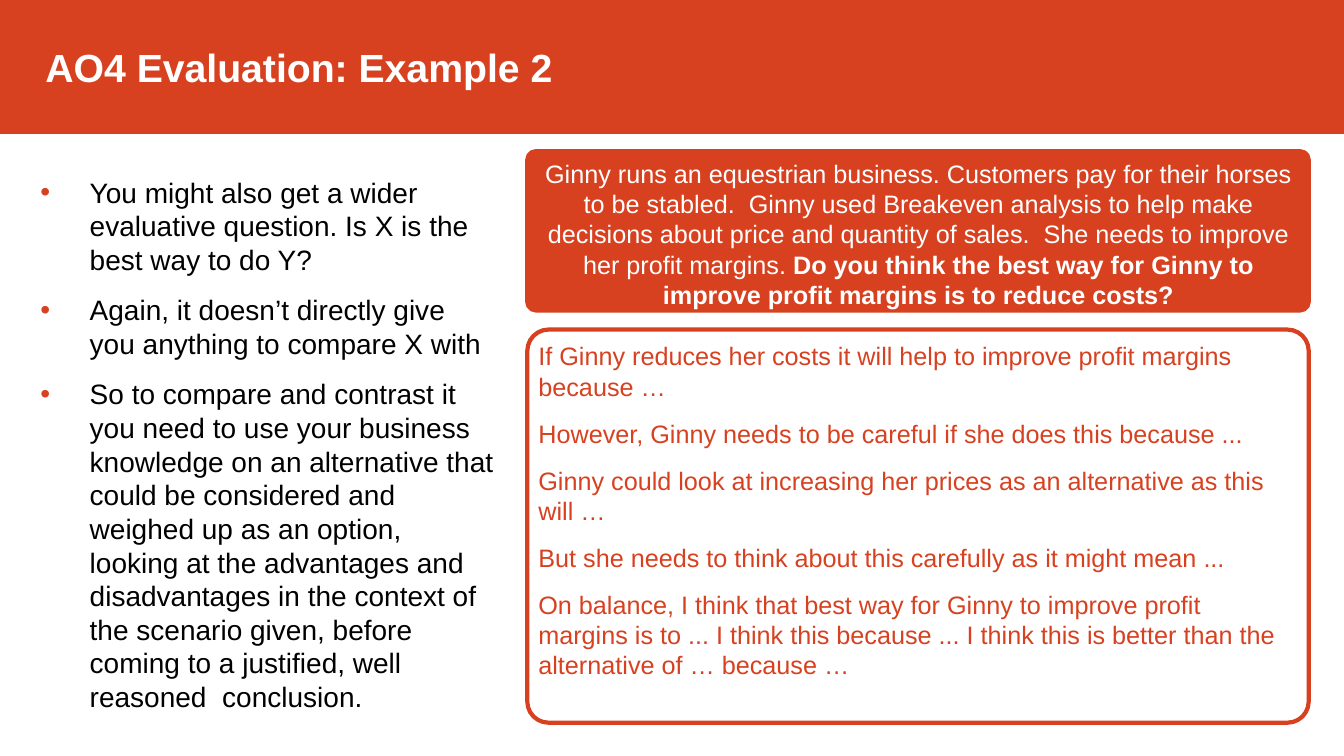
from lxml import etree
from pptx import Presentation
from pptx.dml.color import RGBColor
from pptx.enum.shapes import MSO_SHAPE
from pptx.enum.text import MSO_ANCHOR, MSO_AUTO_SIZE, PP_ALIGN
from pptx.oxml.ns import qn
from pptx.util import Emu, Pt

RECT, ROUND = MSO_SHAPE.RECTANGLE, MSO_SHAPE.ROUNDED_RECTANGLE
LEFT, CENTER = PP_ALIGN.LEFT, PP_ALIGN.CENTER
TOP, MIDDLE = MSO_ANCHOR.TOP, MSO_ANCHOR.MIDDLE
NO_FIT = MSO_AUTO_SIZE.NONE

EMU_PER_PX = 9144  # 100 px to the inch
TITLE_ONLY = 5
RED, WHITE, BLACK = "D74120", "FFFFFF", "000000"


def px(n):
    return Emu(n * EMU_PER_PX)


def rgb(value):
    return RGBColor.from_string(value)


class SlideBuilder:
    font = "Arial"
    inset = 5

    def __init__(self, slide):
        self.slide = slide

    def panel(self, kind, box, fill=None, width=3):
        sp = self.slide.shapes.add_shape(kind, *map(px, box))
        sp.shadow.inherit = False
        if fill:
            sp.fill.solid()
            sp.fill.fore_color.rgb = rgb(fill)
        else:
            sp.fill.background()
        sp.line.color.rgb = rgb(RED)
        sp.line.width = Pt(width)
        return sp

    def title(self, box, text, indent):
        sp = self.slide.shapes.title
        self.slide.shapes._spTree.append(sp._element)  # bring in front of the band
        sp.left, sp.top, sp.width, sp.height = map(px, box)
        self.fill_text(sp.text_frame, [[(text, True)]], 28, WHITE, anchor=MIDDLE,
                       indent=indent)

    def text(self, box, paragraphs, size, color, **style):
        sp = self.slide.shapes.add_textbox(*map(px, box))
        self.fill_text(sp.text_frame, paragraphs, size, color, **style)

    def fill_text(self, tf, paragraphs, size, color, align=LEFT, anchor=TOP,
                  before=0, margin=0, indent=0, bullet=None):
        frame = {"word_wrap": True, "auto_size": NO_FIT, "vertical_anchor": anchor}
        for side in ("left", "top", "right", "bottom"):
            frame[f"margin_{side}"] = px(self.inset)
        for name, value in frame.items():
            setattr(tf, name, value)
        for i, runs in enumerate(paragraphs):
            p = tf.paragraphs[0] if i == 0 else tf.add_paragraph()
            p.alignment, p.space_before = align, Pt(before)
            pPr = p._p.get_or_add_pPr()
            pPr.set("marL", str(px(margin)))
            pPr.set("indent", str(px(indent)))
            if bullet:
                self.bullet(pPr, bullet)
            for content, bold in runs:
                r = p.add_run()
                r.text = content
                look = {"name": self.font, "size": Pt(size), "bold": bold}
                for name, value in look.items():
                    setattr(r.font, name, value)
                r.font.color.rgb = rgb(color)

    def bullet(self, pPr, char):
        color = etree.SubElement(pPr, qn("a:buClr"))
        etree.SubElement(color, qn("a:srgbClr"), val=RED)
        etree.SubElement(pPr, qn("a:buFont"), typeface=self.font)
        etree.SubElement(pPr, qn("a:buChar"), char=char)


ADVICE = [
    "You might also get a wider evaluative question. Is X is the best way to do Y?",
    "Again, it doesn’t directly give you anything to compare X with",
    "So to compare and contrast it you need to use your business knowledge on an "
    "alternative that could be considered and weighed up as an option, looking at the "
    "advantages and disadvantages in the context of the scenario given, before coming "
    "to a justified, well reasoned  conclusion.",
]
SCENARIO = (
    "Ginny runs an equestrian business. Customers pay for their horses to be stabled.  "
    "Ginny used Breakeven analysis to help make decisions about price and quantity of "
    "sales.  She needs to improve her profit margins. "
)
QUESTION = "Do you think the best way for Ginny to improve profit margins is to reduce costs?"
ANSWER = [
    "If Ginny reduces her costs it will help to improve profit margins because …",
    "However, Ginny needs to be careful if she does this because ...",
    "Ginny could look at increasing her prices as an alternative as this will …",
    "But she needs to think about this carefully as it might mean ...",
    "On balance, I think that best way for Ginny to improve profit margins is to ... "
    "I think this because ... I think this is better than the alternative of … because …",
]


def plain(lines):
    return [[(line, False)] for line in lines]


def main():
    prs = Presentation()
    prs.slide_width, prs.slide_height = px(1333), px(750)
    s = SlideBuilder(prs.slides.add_slide(prs.slide_layouts[TITLE_ONLY]))

    # Title band
    s.panel(RECT, (0, 0, 1333, 132), RED, width=1)
    s.title((0, 40, 1333, 53), "AO4 Evaluation: Example 2", indent=40)

    # Advice on the left
    s.text((35, 169, 464, 570), plain(ADVICE), 20, BLACK,
           before=12, margin=49, indent=-49, bullet="•")

    # Scenario and model answer on the right
    for top, height, fill in ((150, 158, RED), (327, 390, None)):
        s.panel(ROUND, (523, top, 775, height), fill).adjustments[0] = 0.054
    s.text((526, 152, 770, 243), [[(SCENARIO, False), (QUESTION, True)]], 18, WHITE,
           align=CENTER)
    s.text((529, 333, 763, 338), plain(ANSWER), 18, RED, before=12)

    prs.save("out.pptx")


if __name__ == "__main__":
    main()
